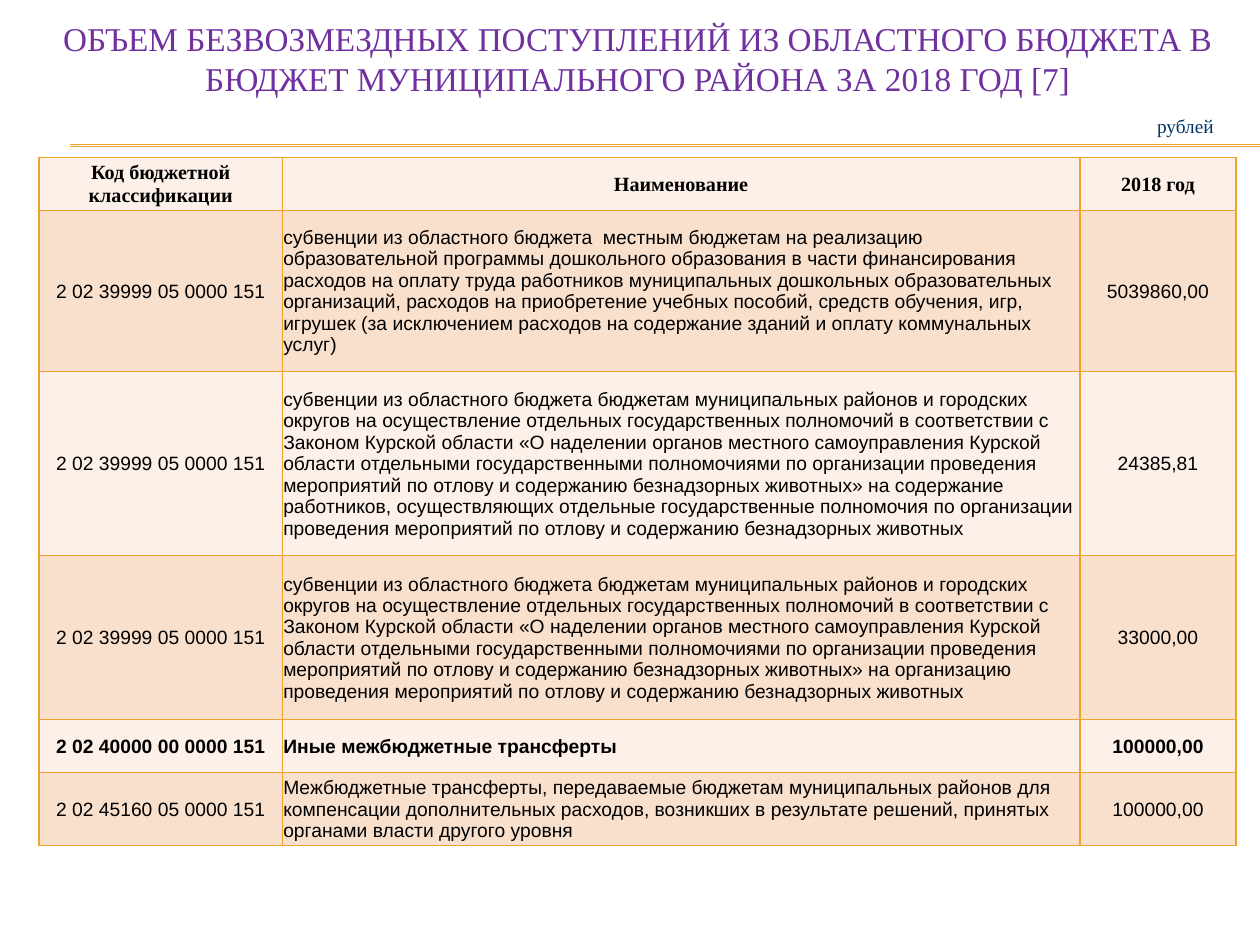
from lxml.etree import SubElement
from pptx import Presentation
from pptx.dml.color import RGBColor
from pptx.enum.shapes import MSO_CONNECTOR
from pptx.enum.text import MSO_ANCHOR, MSO_AUTO_SIZE, PP_ALIGN
from pptx.oxml.ns import qn
from pptx.util import Cm, Pt

PURPLE = RGBColor(0x70, 0x30, 0xA0)
NAVY = RGBColor(0x00, 0x33, 0x66)
BLACK = RGBColor(0x00, 0x00, 0x00)
ORANGE = RGBColor(0xF0, 0xA2, 0x2E)
LIGHT = RGBColor(0xFC, 0xF0, 0xE8)
PEACH = RGBColor(0xF9, 0xE0, 0xCD)
SERIF = "Times New Roman"
SANS = "Arial"

TITLE = ("ОБЪЕМ БЕЗВОЗМЕЗДНЫХ ПОСТУПЛЕНИЙ ИЗ ОБЛАСТНОГО БЮДЖЕТА В "
         "БЮДЖЕТ МУНИЦИПАЛЬНОГО РАЙОНА ЗА 2018 ГОД [7]")
SUBVENTION_CODE = "2 02 39999 05 0000 151"
EVENTS = ("проведения мероприятий по отлову и содержанию "
          "безнадзорных животных")
ANIMALS = ("субвенции из областного бюджета бюджетам муниципальных районов и "
           "городских округов на осуществление отдельных государственных "
           "полномочий в соответствии с Законом Курской области «О наделении "
           "органов местного самоуправления Курской области отдельными "
           f"государственными полномочиями по организации {EVENTS}» на ")
ROWS = [
    ("Код бюджетной классификации", "Наименование", "2018 год"),
    (SUBVENTION_CODE,
     "субвенции из областного бюджета  местным бюджетам на реализацию "
     "образовательной программы дошкольного образования в части "
     "финансирования расходов на оплату труда работников муниципальных "
     "дошкольных образовательных организаций, расходов на приобретение "
     "учебных пособий, средств обучения, игр, игрушек (за исключением "
     "расходов на содержание зданий и оплату коммунальных услуг)",
     "5039860,00"),
    (SUBVENTION_CODE,
     ANIMALS + "содержание работников, осуществляющих отдельные "
     f"государственные полномочия по организации {EVENTS}",
     "24385,81"),
    (SUBVENTION_CODE, ANIMALS + f"организацию {EVENTS}", "33000,00"),
    ("2 02 40000 00 0000 151", "Иные межбюджетные трансферты", "100000,00"),
    ("2 02 45160 05 0000 151",
     "Межбюджетные трансферты, передаваемые бюджетам муниципальных районов "
     "для компенсации дополнительных расходов, возникших в результате "
     "решений, принятых органами власти другого уровня",
     "100000,00"),
]
COL_WIDTHS = [4.9, 16.08, 3.15]
ROW_HEIGHTS = [1.07, 3.25, 3.71, 3.3, 1.07, 1.47]
HEADER_ROW, TOTAL_ROW = 0, 4


def write(tf, text, size=11, font=SANS, color=BLACK, bold=False,
          align=PP_ALIGN.CENTER):
    p = tf.paragraphs[0]
    p.alignment = align
    r = p.add_run()
    r.text = text
    r.font.size = Pt(size)
    r.font.name = font
    r.font.color.rgb = color
    r.font.bold = bold


class SlideBuilder:
    def __init__(self, slide, accent=ORANGE, bands=(LIGHT, PEACH)):
        self.slide = slide
        self.accent = accent
        self.bands = bands

    def text(self, x, y, w, h, text, wrap=True, anchor=MSO_ANCHOR.TOP,
             auto_size=MSO_AUTO_SIZE.NONE, **fmt):
        sp = self.slide.shapes.add_textbox(Cm(x), Cm(y), Cm(w), Cm(h))
        tf = sp.text_frame
        tf.word_wrap = wrap
        tf.auto_size = auto_size
        tf.vertical_anchor = anchor
        write(tf, text, **fmt)

    def rule(self, x1, x2, y):
        line = self.slide.shapes.add_connector(
            MSO_CONNECTOR.STRAIGHT, Cm(x1), Cm(y), Cm(x2), Cm(y))
        line.line.color.rgb = self.accent
        line.line.width = Pt(0.75)
        SubElement(line._element.spPr, qn("a:effectLst"))

    def cell(self, cell, text, fill, **fmt):
        cell.margin_left = cell.margin_right = cell.margin_top = Cm(0.02)
        cell.margin_bottom = 0
        cell.vertical_anchor = MSO_ANCHOR.MIDDLE
        write(cell.text_frame, text, **fmt)
        tc_pr = cell._tc.get_or_add_tcPr()
        for side in ("a:lnL", "a:lnR", "a:lnT", "a:lnB"):
            ln = SubElement(tc_pr, qn(side), w=str(Pt(1)))
            solid = SubElement(ln, qn("a:solidFill"))
            SubElement(solid, qn("a:srgbClr"), val=str(self.accent))
        cell.fill.solid()
        cell.fill.fore_color.rgb = fill

    def table(self, x, y, rows, widths, heights):
        frame = self.slide.shapes.add_table(
            len(rows), len(widths), Cm(x), Cm(y),
            Cm(sum(widths)), Cm(sum(heights)))
        table = frame.table
        for col, width in zip(table.columns, widths):
            col.width = Cm(width)
        for row, height in zip(table.rows, heights):
            row.height = Cm(height)
        for i, row in enumerate(rows):
            header = i == HEADER_ROW
            for j, text in enumerate(row):
                name = j == 1 and not header
                self.cell(table.cell(i, j), text, self.bands[i % 2],
                          size=11.5 if header else 11,
                          font=SERIF if header else SANS,
                          bold=i in (HEADER_ROW, TOTAL_ROW),
                          align=PP_ALIGN.LEFT if name else PP_ALIGN.CENTER)


def main():
    prs = Presentation()
    prs.slide_width, prs.slide_height = Cm(25.4), Cm(19.05)
    s = SlideBuilder(prs.slides.add_slide(prs.slide_layouts[6]))
    for y in (2.92, 2.95):
        s.rule(1.42, 25.4, y)
    s.text(0.79, 0, 24.13, 2.34, TITLE, anchor=MSO_ANCHOR.MIDDLE,
           size=19, font=SERIF, color=PURPLE)
    s.table(0.79, 3.17, ROWS, COL_WIDTHS, ROW_HEIGHTS)
    s.text(23.04, 2.18, 1.68, 0.74, "рублей", wrap=False,
           auto_size=MSO_AUTO_SIZE.SHAPE_TO_FIT_TEXT,
           font=SERIF, color=NAVY, align=PP_ALIGN.RIGHT)
    prs.save("out.pptx")


if __name__ == "__main__":
    main()
